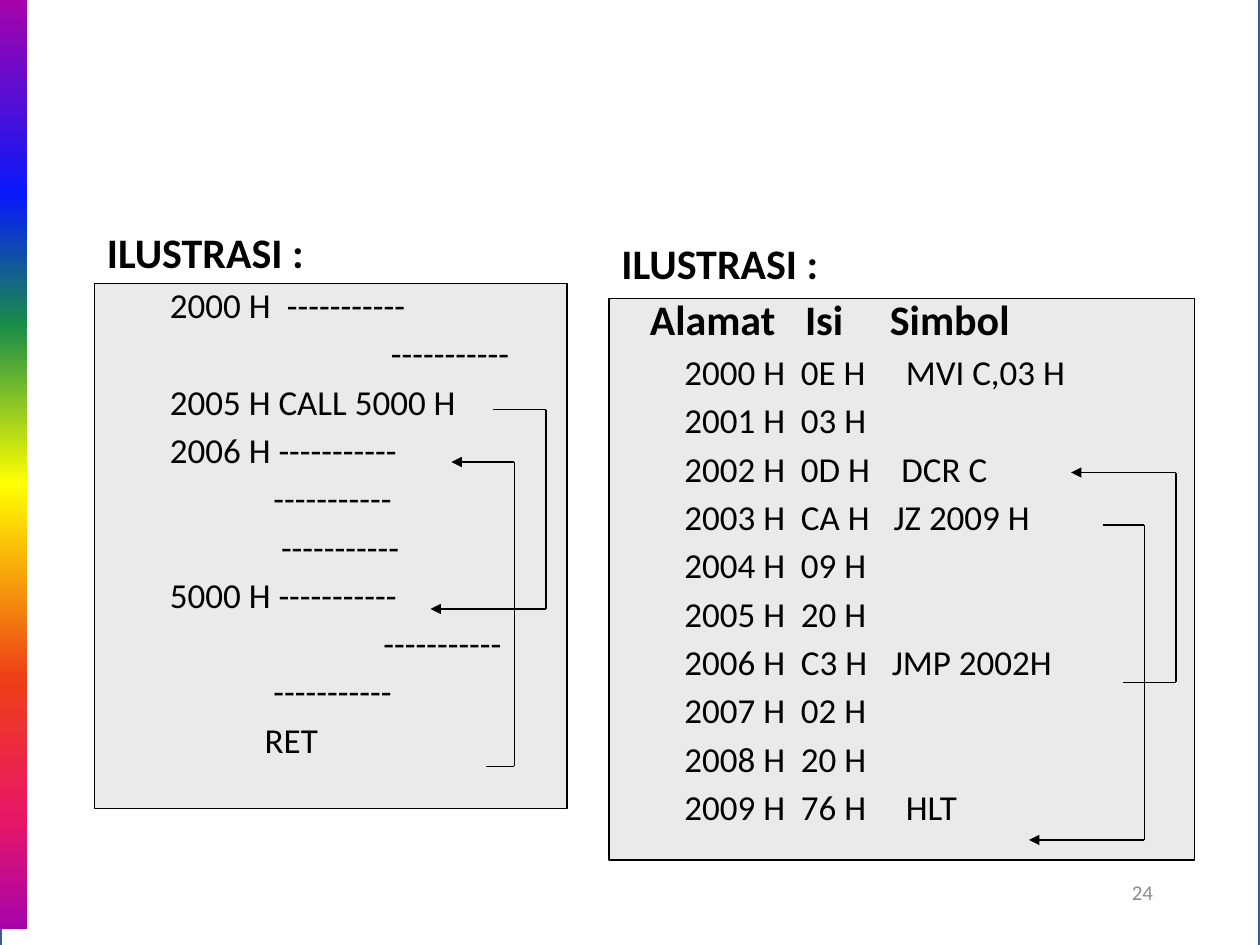
"""Build a slide showing how CALL, RET and jumps move through a program."""
from itertools import pairwise

from lxml.etree import SubElement
from pptx import Presentation
from pptx.dml.color import RGBColor
from pptx.enum.shapes import MSO_CONNECTOR, MSO_SHAPE
from pptx.enum.text import MSO_ANCHOR, PP_ALIGN
from pptx.oxml.ns import qn
from pptx.util import Pt

BLACK = RGBColor(0, 0, 0)
WHITE = RGBColor(255, 255, 255)
PANEL_GRAY = RGBColor(0xEA, 0xEA, 0xEA)
NUMBER_GRAY = RGBColor(0x8C, 0x8C, 0x8C)
FRAME_BLUE = RGBColor(0x3A, 0x5F, 0x8C)
RAINBOW = [(0, "A603AB"), (21, "0819FB"), (35, "1A8D48"), (52, "FFFF00"),
           (73, "EE3F17"), (88, "E81766"), (100, "A603AB")]

HEADING = {"name": "Calibri", "size": Pt(24), "bold": True}
CODE = {"name": "Calibri", "size": Pt(20), "bold": False}
NUMBER = {"name": "Calibri", "size": Pt(12), "bold": False}
DASHES = "-----------"
ADDRESS, CONTENT = 36, 102.6

PANELS = [
    {"box": (54, 162, 270, 300), "text": (54, 126, 276, 322.5), "lines": [
        (HEADING, [(0, "ILUSTRASI :")]),
        (CODE, [(ADDRESS, "2000 H"), (102.9, DASHES)]),
        (CODE, [(162.3, DASHES)]),
        (CODE, [(ADDRESS, "2005 H CALL 5000 H")]),
        (CODE, [(ADDRESS, "2006 H " + DASHES)]),
        (CODE, [(95.2, DASHES)]),
        (CODE, [(99.5, DASHES)]),
        (CODE, [(ADDRESS, "5000 H " + DASHES)]),
        (CODE, [(158, DASHES)]),
        (CODE, [(95.2, DASHES)]),
        (CODE, [(90.2, "RET")]),
    ]},
    {"box": (348, 170.5, 334.5, 321), "text": (348, 132, 342, 345.5), "lines": [
        (HEADING, [(0, "ILUSTRASI :")]),
        (HEADING, [(16.3, "Alamat"), (104.9, "Isi"), (153.4, "Simbol")]),
        (CODE, [(ADDRESS, "2000 H"), (CONTENT, "0E H"), (162.5, "MVI C,03 H")]),
        (CODE, [(ADDRESS, "2001 H"), (CONTENT, "03 H")]),
        (CODE, [(ADDRESS, "2002 H"), (CONTENT, "0D H"), (160, "DCR C")]),
        (CODE, [(ADDRESS, "2003 H"), (CONTENT, "CA H"), (155.5, "JZ 2009 H")]),
        (CODE, [(ADDRESS, "2004 H"), (CONTENT, "09 H")]),
        (CODE, [(ADDRESS, "2005 H"), (CONTENT, "20 H")]),
        (CODE, [(ADDRESS, "2006 H"), (CONTENT, "C3 H"), (154.5, "JMP 2002H")]),
        (CODE, [(ADDRESS, "2007 H"), (CONTENT, "02 H")]),
        (CODE, [(ADDRESS, "2008 H"), (CONTENT, "20 H")]),
        (CODE, [(ADDRESS, "2009 H"), (CONTENT, "76 H"), (162.5, "HLT")]),
    ]},
]

JUMPS = [
    {"start": (282, 234), "turn": 312, "end": (246, 348)},
    {"start": (278, 438), "turn": 294, "end": (258, 264)},
    {"start": (630, 300), "turn": 654, "end": (588, 480)},
    {"start": (642, 390), "turn": 672, "end": (612, 270)},
]


def add_rectangle(slide, box, fill, line=None, width=0.75):
    shape = slide.shapes.add_shape(MSO_SHAPE.RECTANGLE, *map(Pt, box))
    shape.shadow.inherit = False
    if fill is not None:
        shape.fill.solid()
        shape.fill.fore_color.rgb = fill
    if line is None:
        shape.line.fill.background()
    else:
        shape.line.color.rgb = line
        shape.line.width = Pt(width)
    return shape


def add_rainbow(slide, box):
    bar = add_rectangle(slide, box, None)
    bar.fill.gradient()
    gradient = bar._element.spPr.find(qn("a:gradFill"))
    stops = gradient.find(qn("a:gsLst"))
    for stop in list(stops):
        stops.remove(stop)
    for position, color in RAINBOW:
        stop = SubElement(stops, qn("a:gs"), pos=str(position * 1000))
        SubElement(stop, qn("a:srgbClr"), val=color)
    gradient.find(qn("a:lin")).set("ang", "5400000")


def add_run(paragraph, text, style, color):
    run = paragraph.add_run()
    run.text = text
    for name, value in style.items():
        setattr(run.font, name, value)
    run.font.color.rgb = color


def add_text(slide, box, lines, color=BLACK, alignment=PP_ALIGN.JUSTIFY,
             anchor=MSO_ANCHOR.TOP):
    frame = slide.shapes.add_textbox(*map(Pt, box)).text_frame
    frame.word_wrap = True
    frame.vertical_anchor = anchor
    for index, (style, cells) in enumerate(lines):
        paragraph = frame.add_paragraph() if index else frame.paragraphs[0]
        paragraph.alignment = alignment
        stops = [position for position, _ in cells if position]
        if stops:
            tabs = SubElement(paragraph._p.get_or_add_pPr(), qn("a:tabLst"))
            for position in stops:
                SubElement(tabs, qn("a:tab"), pos=str(Pt(position)), algn="l")
        if index:
            paragraph.space_before = Pt(3.6)
        text = "".join(("\t" if position else "") + cell for position, cell in cells)
        add_run(paragraph, text, style, color)


def add_jump(slide, start, turn, end):
    points = [start, (turn, start[1]), (turn, end[1]), end]
    for first, second in pairwise(points):
        connector = slide.shapes.add_connector(
            MSO_CONNECTOR.STRAIGHT, *map(Pt, first + second))
        connector.line.color.rgb = BLACK
        connector.line.width = Pt(0.75)
        if second == end:
            SubElement(connector.line._get_or_add_ln(), qn("a:tailEnd"), type="triangle")
        SubElement(connector._element.spPr, qn("a:effectLst"))


def main():
    presentation = Presentation()
    presentation.slide_width, presentation.slide_height = Pt(720), Pt(540)
    slide = presentation.slides.add_slide(presentation.slide_layouts[6])
    add_rectangle(slide, (0, -8, 720, 561.5), WHITE, FRAME_BLUE, 2)
    add_rainbow(slide, (0, 0, 15.6, 531))
    add_text(slide, (516, 492, 150, 36), [(NUMBER, [(0, "24")])],
             NUMBER_GRAY, PP_ALIGN.RIGHT, MSO_ANCHOR.MIDDLE)
    for panel in PANELS:
        add_rectangle(slide, panel["box"], PANEL_GRAY, BLACK)
        add_text(slide, panel["text"], panel["lines"])
    for jump in JUMPS:
        add_jump(slide, **jump)
    presentation.save("out.pptx")


if __name__ == "__main__":
    main()
